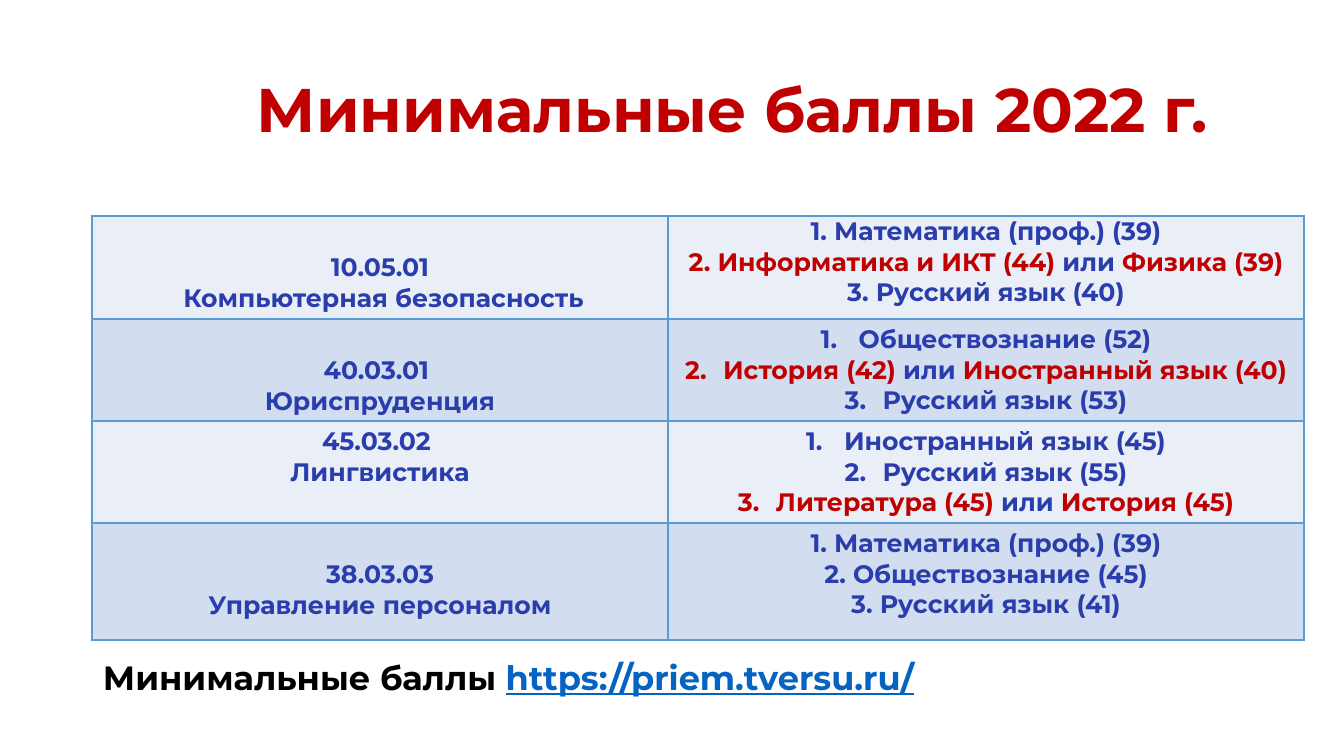
from lxml import etree
from pptx import Presentation
from pptx.dml.color import RGBColor
from pptx.enum.text import MSO_ANCHOR, PP_ALIGN
from pptx.oxml.ns import qn
from pptx.util import Emu, Pt

LEFT, CENTER = PP_ALIGN.LEFT, PP_ALIGN.CENTER
TOP, MIDDLE = MSO_ANCHOR.TOP, MSO_ANCHOR.MIDDLE

EMU_PER_PX = 914400 / 100.8
FONT = "Montserrat"
BLUE, RED, BLACK, LINK = "2A3DAD", "C00000", "000000", "0563C1"
BORDER = "5B9BD5"
BANDS = ("EAEFF7", "D2DEEF")

COLUMN_WIDTHS = (576, 636)
ROW_HEIGHTS = (103, 102, 102, 117)
INSET, SIDE_INSET, LINE = 5, 10, 31
NUMBER_INDENT = 38

# Each line is a list of (text, colour) runs.
PROGRAMMES = [
    {
        "name": ["10.05.01", " Компьютерная безопасность"],
        "name_top": INSET + LINE,
        "exams": [
            [(" Математика (проф.) (39)", BLUE)],
            [(" Информатика и ИКТ (44)", RED), (" или ", BLUE), ("Физика (39)", RED)],
            [(" Русский язык (40)", BLUE)],
        ],
        "exams_inset": (12, 0),
        "indent": 0,
    },
    {
        "name": ["40.03.01 ", "Юриспруденция"],
        "name_top": INSET + LINE,
        "exams": [
            [("Обществознание (52)", BLUE)],
            [("История (42)", RED), (" или ", BLUE), ("Иностранный язык (40)", RED)],
            [("Русский язык (53)", BLUE)],
        ],
        "indent": NUMBER_INDENT,
    },
    {
        "name": ["45.03.02 ", "Лингвистика"],
        "exams": [
            [("Иностранный язык (45)", BLUE)],
            [("Русский язык (55)", BLUE)],
            [("Литература (45) ", RED), ("или ", BLUE), ("История (45)", RED)],
        ],
        "indent": NUMBER_INDENT,
    },
    {
        "name": ["38.03.03", "Управление персоналом"],
        "name_top": INSET + LINE,
        "exams": [
            [("1. Математика (проф.) (39)", BLUE)],
            [("2. Обществознание (45)", BLUE)],
            [("3. Русский язык (41)", BLUE)],
        ],
    },
]


def px(length):
    return Emu(round(length * EMU_PER_PX))


def rgb(value):
    return RGBColor.from_string(value)


def number_paragraph(paragraph, indent):
    """Give the paragraph an automatic number with a hanging indent in px."""
    properties = paragraph._p.get_or_add_pPr()
    properties.set("marL", str(px(indent)))
    properties.set("indent", str(px(-indent)))
    etree.SubElement(properties, qn("a:buAutoNum"), type="arabicPeriod")


def write_text(frame, lines, size=18, align=LEFT, spacing=None, number_indent=None):
    """Fill a text frame with lines of (text, colour) runs."""
    for index, runs in enumerate(lines):
        paragraph = frame.paragraphs[0] if index == 0 else frame.add_paragraph()
        paragraph.alignment = align
        if spacing:
            paragraph.line_spacing = spacing
        if number_indent is not None:
            number_paragraph(paragraph, number_indent)
        for text, colour in runs:
            run = paragraph.add_run()
            run.text = text
            run.font.name = FONT
            run.font.size = Pt(size)
            run.font.bold = True
            run.font.color.rgb = rgb(colour)
            if colour == LINK:
                run.font.underline = True


def add_text(slide, lines, left, top, width, height, anchor=TOP, **text_format):
    frame = slide.shapes.add_textbox(px(left), px(top), px(width), px(height)).text_frame
    frame.word_wrap = True
    frame.vertical_anchor = anchor
    write_text(frame, lines, **text_format)


def add_borders(cell):
    properties = cell._tc.get_or_add_tcPr()
    for side in ("lnL", "lnR", "lnT", "lnB"):
        line = etree.SubElement(properties, qn(f"a:{side}"), w=str(Pt(1)))
        fill = etree.SubElement(line, qn("a:solidFill"))
        etree.SubElement(fill, qn("a:srgbClr"), val=BORDER)


def fill_cell(cell, lines, band, side, top, bottom, number_indent=None):
    add_borders(cell)
    cell.fill.solid()
    cell.fill.fore_color.rgb = rgb(band)
    cell.margin_left = cell.margin_right = px(side)
    cell.margin_top, cell.margin_bottom = px(top), px(bottom)
    cell.vertical_anchor = TOP
    write_text(cell.text_frame, lines, align=CENTER, number_indent=number_indent)


def add_score_table(slide, left, top):
    table = slide.shapes.add_table(
        len(PROGRAMMES), len(COLUMN_WIDTHS), px(left), px(top),
        px(sum(COLUMN_WIDTHS)), px(sum(ROW_HEIGHTS)),
    ).table
    table.first_row = table.horz_banding = False
    for column, width in zip(table.columns, COLUMN_WIDTHS):
        column.width = px(width)
    for index, (programme, height) in enumerate(zip(PROGRAMMES, ROW_HEIGHTS)):
        table.rows[index].height = px(height)
        band = BANDS[index % len(BANDS)]
        name = [[(text, BLUE)] for text in programme["name"]]
        fill_cell(table.cell(index, 0), name, band, SIDE_INSET,
                  programme.get("name_top", INSET), INSET)
        side, vertical = programme.get("exams_inset", (SIDE_INSET, INSET))
        fill_cell(table.cell(index, 1), programme["exams"], band, side,
                  vertical, vertical, programme.get("indent"))


def main():
    presentation = Presentation()
    presentation.slide_width, presentation.slide_height = px(1344), px(756)
    slide = presentation.slides.add_slide(presentation.slide_layouts[6])
    add_text(slide, [[("Минимальные баллы 2022 г.", RED)]], 247, 40, 1004, 146,
             anchor=MIDDLE, size=44, spacing=0.9)
    add_score_table(slide, 92, 216)
    add_text(slide, [[("Минимальные баллы ", BLACK), ("https://priem.tversu.ru/", LINK)]],
             93, 652, 899, 51, size=24)
    presentation.save("out.pptx")


if __name__ == "__main__":
    main()
